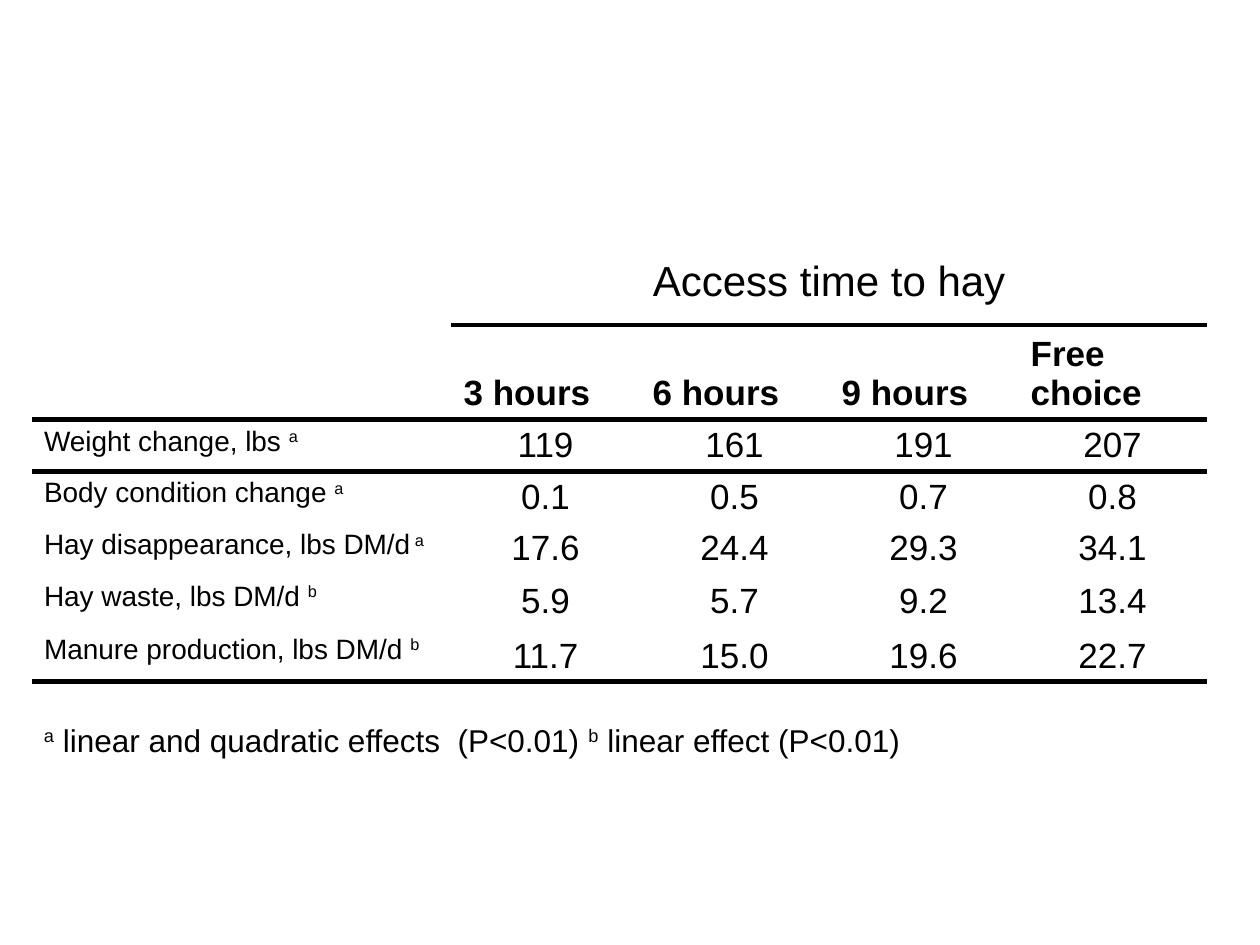
"""Build a slide with a table of hay access time results and its footnote."""
import pptx
import pptx.dml.color
import pptx.enum.text
import pptx.oxml
import pptx.oxml.ns
import pptx.util
from dataclasses import dataclass

Inches = pptx.util.Inches
Pt = pptx.util.Pt
Align = pptx.enum.text.PP_ALIGN
Anchor = pptx.enum.text.MSO_ANCHOR

TITLE = "Access time to hay"
HEADINGS = ["3 hours", "6 hours", "9 hours", "Free choice"]
MEASURES = [
    ("Weight change, lbs ", "a", ["119", "161", "191", "207"]),
    ("Body condition change ", "a", ["0.1", "0.5", "0.7", "0.8"]),
    ("Hay disappearance, lbs DM/d", " a", ["17.6", "24.4", "29.3", "34.1"]),
    ("Hay waste, lbs DM/d ", "b", ["5.9", "5.7", "9.2", "13.4"]),
    ("Manure production, lbs DM/d ", "b", ["11.7", "15.0", "19.6", "22.7"]),
]
FOOTNOTE = [
    ("a", True),
    (" linear and quadratic effects  (P<0.01) ", False),
    ("b", True),
    (" linear effect (P<0.01)", False),
]
COLUMN_WIDTHS = [3.33] + [1.5] * len(HEADINGS)
ROW_HEIGHTS = [0.58, 0.75, 0.34, 0.41, 0.4, 0.42, 0.43]
LEFT = 0.25
NO_STYLE = "{2D5ABB26-0587-4C30-8999-92F81FD0307C}"


@dataclass(frozen=True)
class Theme:
    font: str = "Arial"
    ink: str = "000000"
    title: int = 24
    value: int = 20
    note: int = 18
    label: int = 16
    rule: int = 3


THEME = Theme()


def style_span(span, size, bold=False, raised=False):
    span.font.name = THEME.font
    span.font.size = Pt(size)
    span.font.bold = bold
    span.font.color.rgb = pptx.dml.color.RGBColor.from_string(THEME.ink)
    if raised:
        span.font._element.set("baseline", "30000")


def write_spans(para, pieces, size, bold=False):
    for text, raised in pieces:
        span = para.add_run()
        span.text = text
        style_span(span, size, bold, raised)


def fill_cell(cell, pieces, size, align=Align.LEFT, anchor=Anchor.BOTTOM, bold=False):
    para = cell.text_frame.paragraphs[0]
    write_spans(para, pieces, size, bold)
    para.alignment = align
    cell.vertical_anchor = anchor
    namespace = pptx.oxml.ns.nsdecls("a")
    para._p.get_or_add_pPr().append(pptx.oxml.parse_xml(
        f'<a:spcBef {namespace}><a:spcPct val="20000"/></a:spcBef>'))


def rule_cell(cell, side):
    namespace = pptx.oxml.ns.nsdecls("a")
    line = pptx.oxml.parse_xml(
        f'<a:{side} {namespace} w="{Pt(THEME.rule)}"><a:solidFill>'
        f'<a:srgbClr val="{THEME.ink}"/></a:solidFill></a:{side}>')
    cell._tc.get_or_add_tcPr().insert(0, line)


def add_results(page):
    last = len(ROW_HEIGHTS) - 1
    frame = page.shapes.add_table(
        len(ROW_HEIGHTS), len(COLUMN_WIDTHS), Inches(LEFT), Inches(2),
        Inches(sum(COLUMN_WIDTHS)), Inches(sum(ROW_HEIGHTS)))
    table = frame.table
    table.first_row = table.horz_banding = False
    table._tbl.tblPr.find(pptx.oxml.ns.qn("a:tableStyleId")).text = NO_STYLE
    for column, width in zip(table.columns, COLUMN_WIDTHS):
        column.width = Inches(width)
    for row, height in zip(table.rows, ROW_HEIGHTS):
        row.height = Inches(height)

    for row in range(last + 1):
        for column in range(len(COLUMN_WIDTHS)):
            cell = table.cell(row, column)
            cell.fill.background()
            if row in (1, last) or (row == 0 and column):
                rule_cell(cell, "lnB")
            if row == 2 or (row == 1 and column):
                rule_cell(cell, "lnT")

    table.cell(0, 1).merge(table.cell(0, len(HEADINGS)))
    fill_cell(table.cell(0, 1), [(TITLE, False)], THEME.title, Align.CENTER, Anchor.TOP)
    for column, heading in enumerate(HEADINGS, 1):
        fill_cell(table.cell(1, column), [(heading, False)], THEME.value, bold=True)
    for row, (label, mark, values) in enumerate(MEASURES, 2):
        fill_cell(table.cell(row, 0), [(label, False), (mark, True)],
                  THEME.label, anchor=Anchor.TOP)
        for column, value in enumerate(values, 1):
            fill_cell(table.cell(row, column), [(value, False)], THEME.value, Align.CENTER)


def add_footnote(page):
    box = page.shapes.add_textbox(Inches(LEFT), Inches(5.67), Inches(7.02), Inches(0.4))
    box.text_frame.word_wrap = False
    box.text_frame.auto_size = pptx.enum.text.MSO_AUTO_SIZE.SHAPE_TO_FIT_TEXT
    write_spans(box.text_frame.paragraphs[0], FOOTNOTE, THEME.note)


def main():
    deck = pptx.Presentation()
    deck.slide_width, deck.slide_height = Inches(10), Inches(7.5)
    page = deck.slides.add_slide(deck.slide_layouts[6])
    add_results(page)
    add_footnote(page)
    deck.save("out.pptx")


if __name__ == "__main__":
    main()
